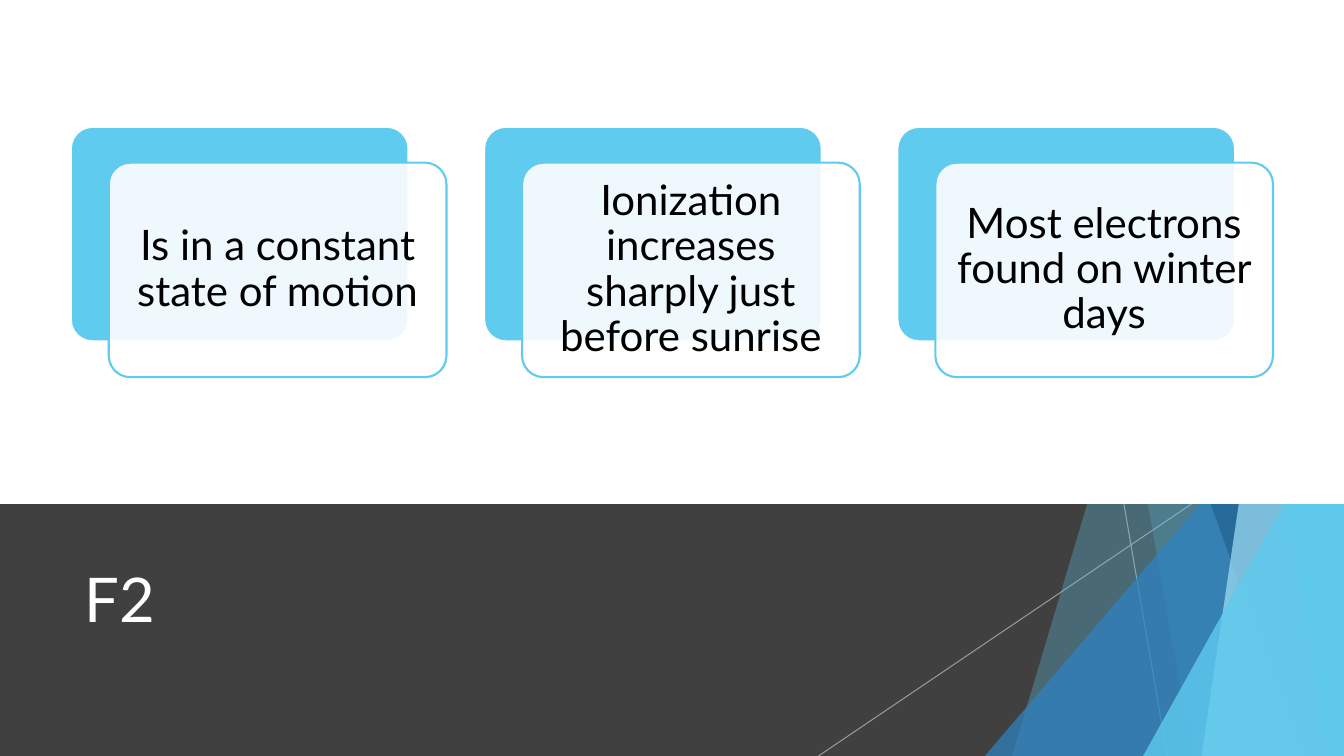
"""Build the F2 layer slide: three cards above a dark, faceted title band."""
from dataclasses import dataclass
from typing import Any

from lxml import etree
from pptx import Presentation
from pptx import util as u
from pptx.dml.color import RGBColor
from pptx.enum import shapes, text
from pptx.oxml.ns import qn

WIDE, HIGH, BAND = 960, 540, 360
TOP = -0.72
HUES = {
    "dark": "404040", "white": "FFFFFF", "black": "000000", "grey": "BFBFBF",
    "sky": "5FCBEF", "pale": "9FE0F5", "blue": "2E83C3", "navy": "226292",
}
FRAME = {"word_wrap": True, "auto_size": text.MSO_AUTO_SIZE.NONE,
         "vertical_anchor": text.MSO_ANCHOR.MIDDLE}
INSET = {side: u.Pt(8.64) for side in
         ("margin_left", "margin_top", "margin_right", "margin_bottom")}


@dataclass
class Box:
    left: float
    top: float
    width: float
    height: float

    def size(self) -> list[int]:
        return [u.Pt(n) for n in (self.left, self.top, self.width, self.height)]


@dataclass
class Shard:
    head: float
    foot: float
    hue: str
    alpha: int


@dataclass
class Peak:
    left: float
    top: float
    hue: str
    alpha: int


@dataclass
class Ray:
    head: float
    foot: float


RAYS = [Ray(802.8, 833.76), Ray(851.04, 584.64)]
FACETS = [
    Shard(884.16, 722.88, "sky", 30),
    Shard(756, 851.76, "sky", 20),
    Peak(703.44, 239.76, "blue", 72),
    Shard(735.12, 929.52, "navy", 70),
    Shard(938.16, 858.24, "pale", 70),
    Shard(861.12, 948.96, "sky", 65),
    Peak(816.48, 282.96, "sky", 80),
]
CARDS = ["Is in a constant state of motion",
         "Ionization increases sharply just before sunrise",
         "Most electrons found on winter days"]


def apply(item: Any, values: dict[str, Any]) -> None:
    for name, value in values.items():
        setattr(item, name, value)


def color(name: str) -> RGBColor:
    return RGBColor.from_string(HUES[name])


def fade(item: Any, alpha: int) -> None:
    for node in item.element.iter(qn("a:srgbClr")):
        etree.SubElement(node, qn("a:alpha")).set("val", str(alpha * 1000))


def paint(shape: Any, hue: str, alpha: int = 100, edge: str = "") -> None:
    shape.shadow.inherit = False
    shape.fill.solid()
    shape.fill.fore_color.rgb = color(hue)
    if alpha < 100:
        fade(shape, alpha)
    if edge:
        shape.line.color.rgb = color(edge)
        shape.line.width = u.Pt(1.5)
    else:
        shape.line.fill.background()


def block(slide: Any, box: Box, hue: str) -> None:
    paint(slide.shapes.add_shape(shapes.MSO_SHAPE.RECTANGLE, *box.size()), hue)


def ray(slide: Any, item: Ray) -> None:
    ends = [u.Pt(n) for n in (item.head, BAND, item.foot, HIGH)]
    line = slide.shapes.add_connector(shapes.MSO_CONNECTOR.STRAIGHT, *ends)
    line.line.color.rgb = color("grey")
    line.line.width = u.Pt(0.75)
    fade(line, 70)
    etree.SubElement(line.element.find(qn("p:spPr")), qn("a:effectLst"))


def facet(slide: Any, item: Shard | Peak) -> None:
    if isinstance(item, Shard):
        pen = slide.shapes.build_freeform(u.Pt(item.head), u.Pt(TOP))
        rest = [(WIDE, TOP), (WIDE, HIGH), (item.foot, HIGH)]
        pen.add_line_segments([(u.Pt(x), u.Pt(y)) for x, y in rest], close=True)
        shape = pen.convert_to_shape()
    else:
        box = Box(item.left, item.top, WIDE - item.left, HIGH - item.top)
        shape = slide.shapes.add_shape(
            shapes.MSO_SHAPE.ISOSCELES_TRIANGLE, *box.size())
        shape.adjustments[0] = 1
    paint(shape, item.hue, item.alpha)


def write(shape: Any, words: str, size: int, hue: str,
          frame: dict[str, Any], para: dict[str, Any]) -> None:
    apply(shape.text_frame, {"text": words} | FRAME | frame)
    line = shape.text_frame.paragraphs[0]
    apply(line, para)
    apply(line.runs[0].font, {"name": "Lato", "size": u.Pt(size)})
    line.runs[0].font.color.rgb = color(hue)


def card(slide: Any, left: float, words: str) -> None:
    for shift, hue, alpha, edge in ((0, "sky", 100, "white"),
                                    (1, "white", 90, "sky")):
        box = Box(left + 27.1 * shift, 90.6 + 25.6 * shift, 241.2, 153.2)
        shape = slide.shapes.add_shape(
            shapes.MSO_SHAPE.ROUNDED_RECTANGLE, *box.size())
        shape.adjustments[0] = 0.1
        paint(shape, hue, alpha, edge)
    note = slide.shapes.add_textbox(
        *Box(left + 31.6, 120.6, 232.2, 144.2).size())
    write(note, words, 30, "black", INSET,
          {"alignment": text.PP_ALIGN.CENTER, "line_spacing": 0.9})


def main() -> None:
    deck = Presentation()
    apply(deck, {"slide_width": u.Pt(WIDE), "slide_height": u.Pt(HIGH)})
    slide = deck.slides.add_slide(deck.slide_layouts[5])
    block(slide, Box(0, BAND, WIDE, HIGH - BAND), "dark")
    for item in RAYS:
        ray(slide, item)
    for item in FACETS:
        facet(slide, item)
    title = slide.shapes.title
    title.element.getparent().append(title.element)
    apply(title, dict(zip(("left", "top", "width", "height"),
                          Box(53.28, 375.12, 676.8, 103.68).size())))
    write(title, "F2", 44, "white", {}, {"alignment": text.PP_ALIGN.LEFT})
    block(slide, Box(0, 0, WIDE, BAND), "white")
    for index, words in enumerate(CARDS):
        card(slide, 50.6 + 295.2 * index, words)
    deck.save("out.pptx")


if __name__ == "__main__":
    main()
